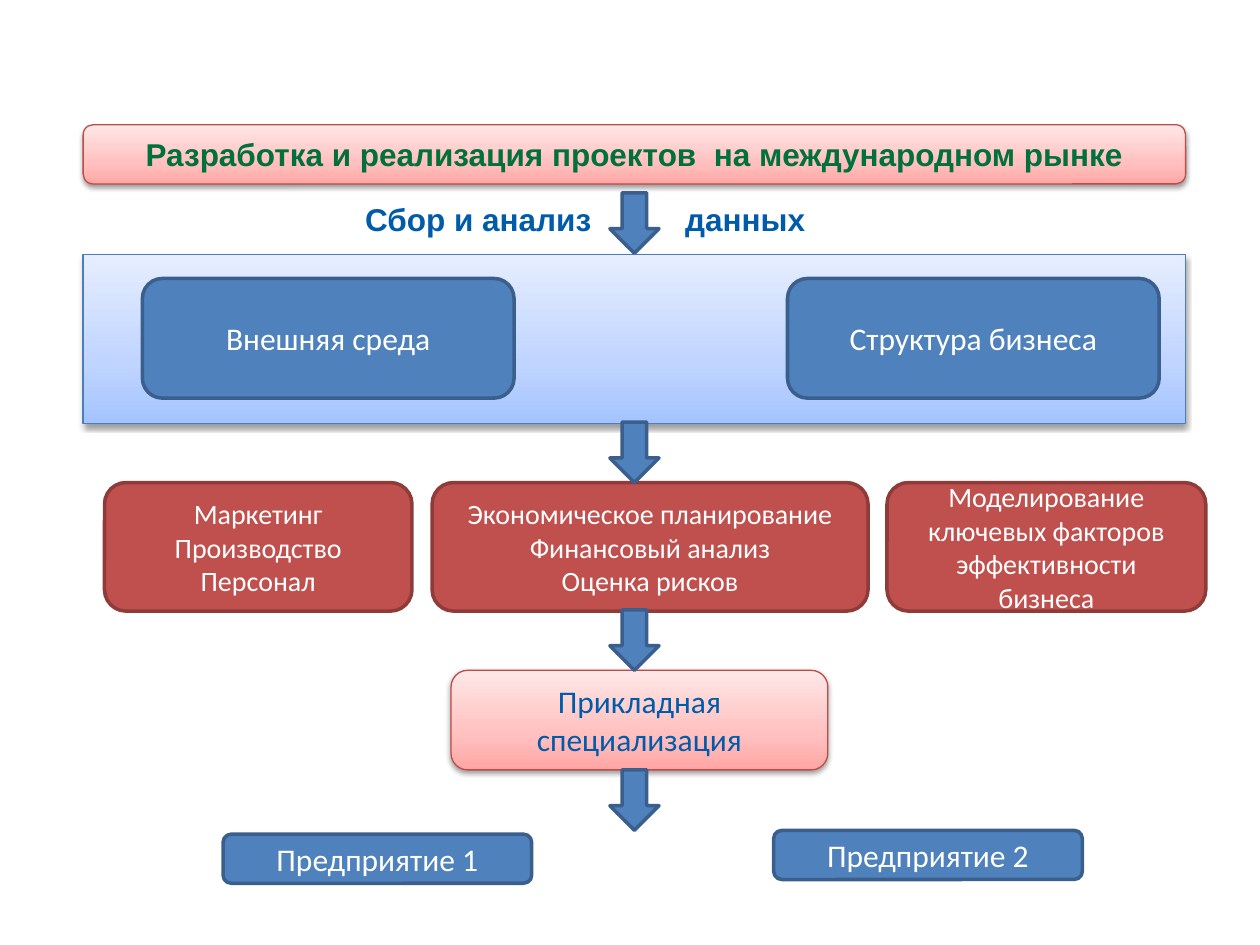
from dataclasses import dataclass
from typing import Optional

from lxml.etree import SubElement
from pptx import Presentation
from pptx.dml.color import RGBColor
from pptx.enum.shapes import MSO_SHAPE as Preset
from pptx.enum.text import MSO_ANCHOR as Anchor, PP_ALIGN as Align
from pptx.oxml.ns import qn
from pptx.util import Emu, Pt

PX = 9144  # 100 px to the inch

GREEN, BLUE_TEXT, WHITE = "00703C", "005BAA", "FFFFFF"


@dataclass(frozen=True)
class Style:
    fill: tuple[str, ...]  # one colour, or the three gradient colours from bottom to top
    line: str
    line_width: float


SOLID_BLUE = Style(("4F81BD",), "3A5F8C", 2)
SOLID_RED = Style(("C0504D",), "8E3B39", 2)
PALE_BLUE = Style(("A4C4FF", "BFD4FF", "E6EEFF"), "4B7EBC", 0.75)
PALE_RED = Style(("FFA6A5", "FFC0BF", "FFE7E7"), "BF4C48", 0.75)


@dataclass(frozen=True)
class Box:
    left: int
    top: int
    width: int
    height: int
    style: Style
    text: Optional[str] = None
    size: int = 18
    color: str = WHITE
    font: str = "Calibri"
    bold: bool = False
    preset: Preset = Preset.ROUNDED_RECTANGLE


ENVIRONMENT = dict(top=221, width=295, height=95, style=SOLID_BLUE)
ANALYSIS = dict(top=383, height=102, style=SOLID_RED, size=16)
ENTERPRISE = dict(width=245, height=39, style=SOLID_BLUE)

BOXES = [
    Box(66, 202, 875, 134, PALE_BLUE, preset=Preset.RECTANGLE),
    Box(66, 99, 875, 47, PALE_RED, "Разработка и реализация проектов  на международном рынке",
        color=GREEN, font="Arial", bold=True),
    Box(left=113, text="Внешняя среда", **ENVIRONMENT),
    Box(left=625, text="Структура бизнеса", **ENVIRONMENT),
    Box(358, 532, 299, 79, PALE_RED, "Прикладная специализация", color=BLUE_TEXT),
    Box(left=83, width=244, text="Маркетинг\nПроизводство\nПерсонал", **ANALYSIS),
    Box(left=343, width=346,
        text="Экономическое планирование\nФинансовый анализ\nОценка рисков", **ANALYSIS),
    Box(left=704, width=253,
        text="Моделирование ключевых факторов эффективности бизнеса", **ANALYSIS),
    Box(left=177, top=662, text="Предприятие 1", **ENTERPRISE),
    Box(left=614, top=659, text="Предприятие 2", **ENTERPRISE),
]
ARROW_TOPS = (153, 335, 484, 611)


def px(*lengths: int) -> list[Emu]:
    return [Emu(length * PX) for length in lengths]


def rgb(color: str) -> RGBColor:
    return RGBColor.from_string(color)


def set_gradient(shape, colors: tuple[str, ...]) -> None:
    shape.fill.gradient()
    shape.fill.gradient_angle = 90
    stops = shape._element.spPr.find(qn("a:gradFill")).find(qn("a:gsLst"))
    for stop in list(stops):
        stops.remove(stop)
    for position, color in zip((0, 35000, 100000), colors):
        stop = SubElement(stops, qn("a:gs"), pos=str(position))
        SubElement(stop, qn("a:srgbClr"), val=color)


def add_soft_shadow(shape) -> None:
    effects = shape._element.spPr.find(qn("a:effectLst"))
    shadow = SubElement(effects, qn("a:outerShdw"), blurRad=str(Pt(3.1)),
                        dist=str(Pt(1.6)), dir="5400000", rotWithShape="0")
    color = SubElement(shadow, qn("a:srgbClr"), val="000000")
    SubElement(color, qn("a:alpha"), val="38000")


def write_text(shape, text: str, *, size: int, color: str, font: str,
               bold: bool = False, align=Align.CENTER, anchor=Anchor.MIDDLE,
               tab: Optional[int] = None) -> None:
    frame = shape.text_frame
    frame.word_wrap = True
    frame.vertical_anchor = anchor
    frame.text = text
    for paragraph in frame.paragraphs:
        paragraph.alignment = align
        if tab is not None:
            tabs = SubElement(paragraph._p.get_or_add_pPr(), qn("a:tabLst"))
            SubElement(tabs, qn("a:tab"), pos=str(tab * PX), algn="l")
        for run in paragraph.runs:
            run.font.size = Pt(size)
            run.font.name = font
            run.font.bold = bold
            run.font.color.rgb = rgb(color)


def add_box(slide, box: Box) -> None:
    shape = slide.shapes.add_shape(box.preset, *px(box.left, box.top, box.width, box.height))
    shape.shadow.inherit = False
    style = box.style
    if len(style.fill) > 1:
        set_gradient(shape, style.fill)
        add_soft_shadow(shape)
    else:
        shape.fill.solid()
        shape.fill.fore_color.rgb = rgb(style.fill[0])
    shape.line.color.rgb = rgb(style.line)
    shape.line.width = Pt(style.line_width)
    if box.text:
        write_text(shape, box.text, size=box.size, color=box.color,
                   font=box.font, bold=box.bold)


def main() -> None:
    presentation = Presentation()
    presentation.slide_width, presentation.slide_height = px(1000, 750)
    slide = presentation.slides.add_slide(presentation.slide_layouts[6])
    for box in BOXES:
        add_box(slide, box)
    for top in ARROW_TOPS:
        add_box(slide, Box(484, top, 39, 48, SOLID_BLUE, preset=Preset.DOWN_ARROW))
    caption = slide.shapes.add_textbox(*px(280, 154, 457, 40))
    write_text(caption, "Сбор и анализ\tданных", size=18, color=BLUE_TEXT, font="Arial",
               bold=True, align=Align.LEFT, anchor=Anchor.TOP, tab=254)
    presentation.save("out.pptx")


if __name__ == "__main__":
    main()
